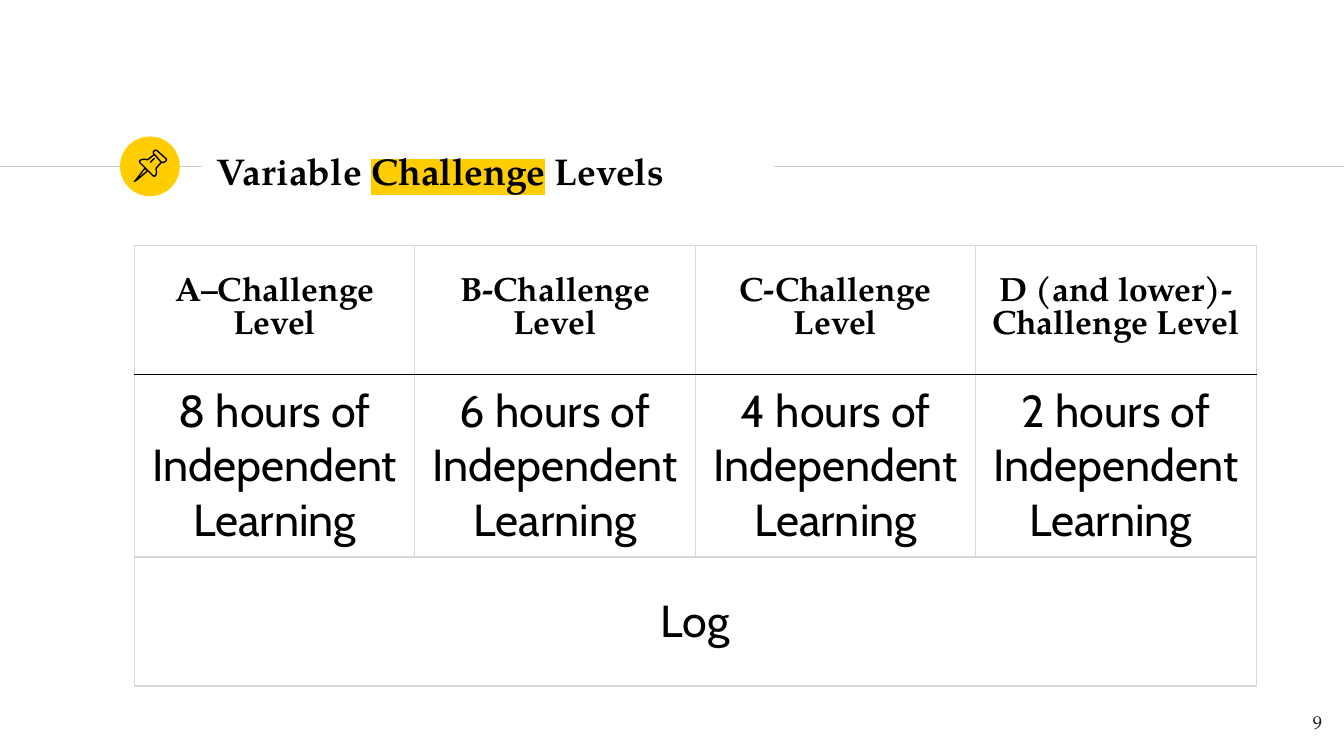
"""Build the slide that compares the hours of each challenge level."""
from dataclasses import dataclass

import pptx
import pptx.dml.color
import pptx.enum.shapes
import pptx.enum.text
import pptx.oxml
import pptx.oxml.ns
import pptx.util

Cm, Pt = pptx.util.Cm, pptx.util.Pt
RGB = pptx.dml.color.RGBColor.from_string
ALIGN = pptx.enum.text.PP_ALIGN
ANCHOR = pptx.enum.text.MSO_ANCHOR
NS = pptx.oxml.ns.nsdecls("a")


@dataclass(frozen=True)
class Theme:
    serif: str = "TeX Gyre Pagella"
    sans: str = "Cabin"
    ink: str = "000000"
    number: str = "1D1D1B"
    accent: str = "FFCD00"
    rule: str = "CCCCCC"
    grid: str = "D9D9D9"
    line: float = 0.75
    title_size: int = 20
    head_size: int = 18
    body_size: int = 24
    number_size: int = 10


class Deck:
    def __init__(self, prs, theme):
        self.theme = theme
        self.s = prs.slides.add_slide(prs.slide_layouts[5])

    def assign(self, target, values):
        for name, value in values.items():
            setattr(target, name, value)

    def place(self, sp, box):
        self.assign(sp, dict(zip(("left", "top", "width", "height"), map(Cm, box))))

    def run(self, p, text, size, font, color, bold=False, highlight=None):
        r = p.add_run()
        r.text = text
        self.assign(r.font, {"size": Pt(size), "name": font, "bold": bold})
        r.font.color.rgb = RGB(color)
        if highlight:
            mark = pptx.oxml.parse_xml(
                f'<a:highlight {NS}><a:srgbClr val="{highlight}"/></a:highlight>')
            r.font.fill._xPr.find(pptx.oxml.ns.qn("a:latin")).addprevious(mark)

    def frame(self, tf, anchor):
        margins = ("margin_left", "margin_top", "margin_right", "margin_bottom")
        self.assign(tf, dict.fromkeys(margins, Cm(0.25)))
        self.assign(tf, {"word_wrap": True, "vertical_anchor": anchor,
                         "auto_size": pptx.enum.text.MSO_AUTO_SIZE.NONE})

    def title(self, box, parts):
        t = self.theme
        sp = self.s.shapes.title
        self.place(sp, box)
        self.frame(sp.text_frame, ANCHOR.MIDDLE)
        p = sp.text_frame.paragraphs[0]
        p.alignment = ALIGN.LEFT
        for text, highlight in parts:
            self.run(p, text, t.title_size, t.serif, t.ink, True, highlight)

    def number(self, box, text):
        t = self.theme
        sp = self.s.shapes.add_textbox(*map(Cm, box))
        self.frame(sp.text_frame, ANCHOR.TOP)
        p = sp.text_frame.paragraphs[0]
        p.alignment = ALIGN.RIGHT
        self.run(p, text, t.number_size, t.serif, t.number)

    def rule(self, x1, x2, y):
        c = self.s.shapes.add_connector(
            pptx.enum.shapes.MSO_CONNECTOR.STRAIGHT, Cm(x1), Cm(y), Cm(x2), Cm(y))
        c.line.color.rgb = RGB(self.theme.rule)
        c.line.width = Pt(self.theme.line)
        c._element.spPr.append(pptx.oxml.parse_xml(f"<a:effectLst {NS}/>"))

    def disc(self, box):
        sp = self.s.shapes.add_shape(pptx.enum.shapes.MSO_SHAPE.OVAL, *map(Cm, box))
        sp.shadow.inherit = False
        sp.fill.solid()
        sp.fill.fore_color.rgb = RGB(self.theme.accent)
        sp.line.fill.background()

    def icon(self, outlines):
        group = self.s.shapes.add_group_shape()
        for points, close in outlines:
            builder = group.shapes.build_freeform(*points[0], scale=Cm(0.01))
            builder.add_line_segments(points[1:], close=close)
            sp = builder.convert_to_shape()
            sp.shadow.inherit = False
            sp.fill.background()
            sp.line.color.rgb = RGB(self.theme.ink)
            sp.line.width = Pt(self.theme.line)

    def borders(self, cell, **sides):
        tcPr = cell._tc.get_or_add_tcPr()
        for side in "LRTB":
            color = sides.get(side, self.theme.grid)
            tcPr.append(pptx.oxml.parse_xml(
                f'<a:ln{side} {NS} w="{Pt(self.theme.line)}"><a:solidFill>'
                f'<a:srgbClr val="{color}"/></a:solidFill></a:ln{side}>'))

    def table(self, left, top, col_width, row_heights, rows):
        t = self.theme
        cols = len(rows[0])
        tbl = self.s.shapes.add_table(
            len(rows), cols, Cm(left), Cm(top),
            Cm(col_width * cols), Cm(sum(row_heights))).table
        self.assign(tbl, {"first_row": False, "horz_banding": False})
        for col in tbl.columns:
            col.width = Cm(col_width)
        head = (t.head_size, t.serif, t.ink, True)
        body = (t.body_size, t.sans, t.ink)
        edges = {0: {"B": t.ink}, 1: {"T": t.ink}}
        for i, texts in enumerate(rows):
            tbl.rows[i].height = Cm(row_heights[i])
            if len(texts) == 1:
                tbl.cell(i, 0).merge(tbl.cell(i, cols - 1))
            for j in range(cols):
                cell = tbl.cell(i, j)
                self.borders(cell, **edges.get(i, {}))
                cell.fill.background()
                self.assign(cell, {
                    "margin_left": Cm(0.25), "margin_right": Cm(0.25),
                    "margin_top": Cm(0.18), "margin_bottom": Cm(0.18),
                    "vertical_anchor": ANCHOR.MIDDLE})
                if j < len(texts):
                    p = cell.text_frame.paragraphs[0]
                    p.alignment = ALIGN.CENTER
                    self.run(p, texts[j], *(body if i else head))


NEEDLE = [(274, 318), (257, 340), (254, 343), (259, 340), (279, 323)]
CAP = [(292, 292), (305, 307), (310, 307), (314, 304), (315, 301),
       (296, 284), (293, 284), (290, 287), (290, 290)]
BODY = [(292, 292), (279, 302), (272, 301), (267, 302), (264, 304), (264, 307),
        (290, 333), (293, 333), (295, 330), (296, 325), (295, 318), (305, 307)]
GLINT = [(284, 307), (292, 299)]

ROWS = [
    ["A–Challenge Level", "B-Challenge Level", "C-Challenge Level",
     "D (and lower)-Challenge Level"],
    ["8 hours of Independent Learning", "6 hours of Independent Learning",
     "4 hours of Independent Learning", "2 hours of Independent Learning "],
    ["Log"],
]


def main():
    prs = pptx.Presentation()
    prs.slide_width, prs.slide_height = Cm(25.4), Cm(14.29)
    theme = Theme()
    deck = Deck(prs, theme)
    deck.rule(0, 3.81, 3.15)
    deck.disc((2.27, 2.58, 1.13, 1.13))
    deck.rule(14.63, 25.4, 3.15)
    deck.title((3.85, 2.5, 10.77, 1.45),
               [("Variable ", None), ("Challenge", theme.accent), (" Levels", None)])
    deck.table(2.54, 4.64, 5.3, [2.44, 2.9, 2.44], ROWS)
    deck.icon([(NEEDLE, True), (CAP, True), (BODY, False), (GLINT, False)])
    deck.number((23.72, 13.18, 1.52, 1.09), "9")
    prs.save("out.pptx")


if __name__ == "__main__":
    main()
